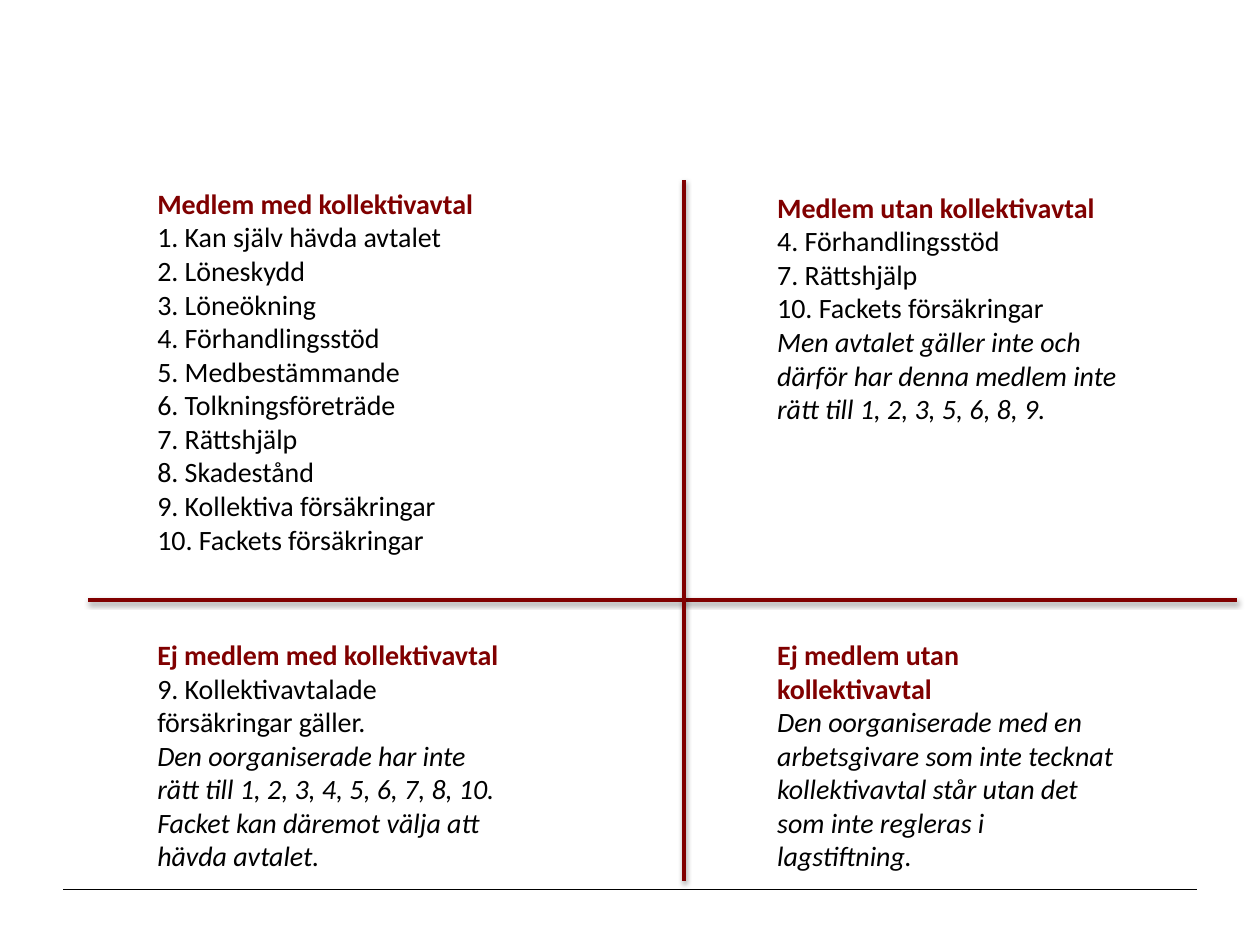
from dataclasses import dataclass

from lxml import etree
from pptx import Presentation
from pptx import util as u
from pptx.dml.color import RGBColor
from pptx.enum import shapes, text
from pptx.oxml import ns


@dataclass(frozen=True)
class Theme:
    font: str = "Calibri"
    size: u.Length = u.Pt(16)
    accent: RGBColor = RGBColor(0x80, 0, 0)
    ink: RGBColor = RGBColor(0, 0, 0)
    axis_width: u.Length = u.Pt(2)
    rule_width: u.Length = u.Pt(0.25)


@dataclass(frozen=True)
class Quadrant:
    left: float
    top: float
    width: float
    height: float
    heading: str
    rights: tuple[str, ...]
    remarks: tuple[str, ...]


@dataclass(frozen=True)
class Line:
    start: tuple[float, float]
    end: tuple[float, float]
    color: RGBColor
    width: u.Length
    shadow: bool


THEME = Theme()
LEFT, RIGHT = 1.15, 6.07
LOWER = 5.01

QUADRANTS = (
    Quadrant(
        LEFT, 1.43, 2.9, 2.97, "Medlem med kollektivavtal",
        (
            "1. Kan själv hävda avtalet",
            "2. Löneskydd",
            "3. Löneökning",
            "4. Förhandlingsstöd",
            "5. Medbestämmande",
            "6. Tolkningsföreträde",
            "7. Rättshjälp",
            "8. Skadestånd",
            "9. Kollektiva försäkringar",
            "10. Fackets försäkringar",
        ),
        (),
    ),
    Quadrant(
        LEFT, LOWER, 2.96, 1.99, "Ej medlem med kollektivavtal",
        ("9. Kollektivavtalade försäkringar gäller.",),
        (
            "Den oorganiserade har inte rätt till 1, 2, 3, 4, 5, 6, 7, 8, 10.",
            "Facket kan däremot välja att hävda avtalet.",
        ),
    ),
    Quadrant(
        RIGHT, LOWER, 2.89, 1.99, "Ej medlem utan kollektivavtal",
        (),
        (
            "Den oorganiserade med en arbetsgivare som inte tecknat "
            "kollektivavtal står utan det som inte regleras i lagstiftning.",
        ),
    ),
    Quadrant(
        RIGHT, 1.46, 2.89, 1.99, "Medlem utan kollektivavtal",
        ("4. Förhandlingsstöd", "7. Rättshjälp", "10. Fackets försäkringar"),
        (
            "Men avtalet gäller inte och därför har denna medlem inte "
            "rätt till 1, 2, 3, 5, 6, 8, 9.",
        ),
    ),
)

FOOTER_RULE = Line((0.5, 7.06), (9.5, 7.06), THEME.ink, THEME.rule_width, False)
AXES = (
    Line((0.7, 4.76), (9.82, 4.76), THEME.accent, THEME.axis_width, True),
    Line((5.43, 6.99), (5.43, 1.43), THEME.accent, THEME.axis_width, True),
)


def write(paragraph, content: str, *, color: RGBColor = THEME.ink,
          bold: bool = False, italic: bool = False) -> None:
    run = paragraph.add_run()
    run.text = content
    run.font.name = THEME.font
    run.font.size = THEME.size
    run.font.color.rgb = color
    run.font.bold = bold
    run.font.italic = italic


def draw_quadrant(slide, quadrant: Quadrant) -> None:
    shape = slide.shapes.add_textbox(
        u.Inches(quadrant.left), u.Inches(quadrant.top),
        u.Inches(quadrant.width), u.Inches(quadrant.height))
    frame = shape.text_frame
    frame.word_wrap = True
    frame.auto_size = text.MSO_AUTO_SIZE.NONE
    write(frame.paragraphs[0], quadrant.heading, color=THEME.accent, bold=True)
    for right in quadrant.rights:
        write(frame.add_paragraph(), right)
    for remark in quadrant.remarks:
        write(frame.add_paragraph(), remark, italic=True)


def draw_line(slide, line: Line) -> None:
    connector = slide.shapes.add_connector(
        shapes.MSO_CONNECTOR.STRAIGHT,
        *(u.Inches(value) for value in line.start + line.end))
    connector.line.color.rgb = line.color
    connector.line.width = line.width
    effects = etree.SubElement(connector._element.spPr, ns.qn("a:effectLst"))
    if line.shadow:
        shadow = etree.SubElement(
            effects, ns.qn("a:outerShdw"), blurRad=str(u.Pt(3.1)),
            dist=str(u.Pt(1.6)), dir="5400000", rotWithShape="0")
        color = etree.SubElement(shadow, ns.qn("a:srgbClr"), val=str(THEME.ink))
        etree.SubElement(color, ns.qn("a:alpha"), val="38000")


def main() -> None:
    presentation = Presentation()
    presentation.slide_width = u.Inches(10)
    presentation.slide_height = u.Inches(7.5)
    slide = presentation.slides.add_slide(presentation.slide_layouts[6])
    draw_line(slide, FOOTER_RULE)
    for quadrant in QUADRANTS:
        draw_quadrant(slide, quadrant)
    for axis in AXES:
        draw_line(slide, axis)
    presentation.save("out.pptx")


if __name__ == "__main__":
    main()
